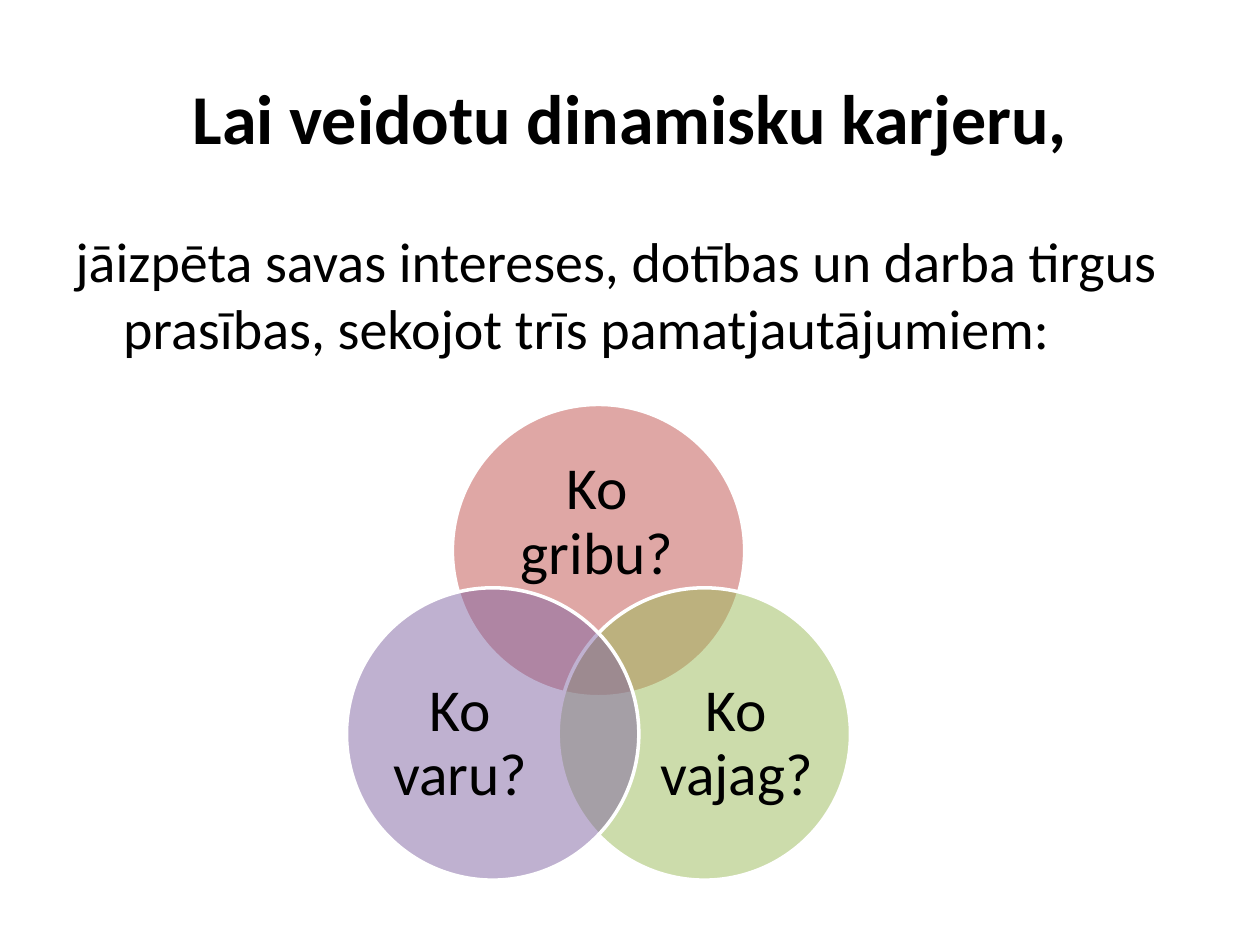
from math import cos, sin, radians
from pptx import Presentation
from pptx.dml.color import RGBColor as RGB
from pptx.enum.shapes import MSO_SHAPE as Shape
from pptx.enum.text import MSO_ANCHOR as Anchor, PP_ALIGN as Align
from pptx.oxml.ns import qn
from pptx.util import Inches, Pt
from lxml.etree import SubElement

THEME = {
    "font": "Calibri", "ink": "000000", "edge": "FFFFFF",
    "red": "C0504D", "green": "9BBB59", "violet": "8064A2",
    "title": 40, "body": 32, "label": 34,
}
WIDE, HIGH = 10, 7.5


def write(shape, text, size, para, frame, bold=False):
    """Fill a shape with one paragraph, formatted from the two dicts."""
    box = shape.text_frame
    box.word_wrap = True
    for key, val in frame.items():
        setattr(box, key, val)
    line = box.paragraphs[0]
    for key, val in para.items():
        setattr(line, key, val)
    run = line.add_run()
    run.text = text
    look = {"name": THEME["font"], "size": Pt(THEME[size]), "bold": bold}
    for key, val in look.items():
        setattr(run.font, key, val)
    run.font.color.rgb = RGB.from_string(THEME["ink"])
    return line


deck = Presentation()
deck.slide_width, deck.slide_height = Inches(WIDE), Inches(HIGH)
slide = deck.slides.add_slide(deck.slide_layouts[5])

# Title and lead text share the left margin
left = WIDE * 0.05
title = slide.shapes.title
place = {"left": left, "top": HIGH * 0.04, "width": WIDE * 0.9, "height": HIGH / 6}
for key, val in place.items():
    setattr(title, key, Inches(val))
write(title, "Lai veidotu dinamisku karjeru,", "title",
      {"alignment": Align.CENTER}, {"vertical_anchor": Anchor.MIDDLE}, True)

lead = slide.shapes.add_textbox(Inches(left), Inches(1.75), Inches(9.33), Inches(4.95))
line = write(lead,
             "jāizpēta savas intereses, dotības un darba tirgus prasības, "
             "sekojot trīs pamatjautājumiem:",
             "body", {"space_before": Pt(6.4)}, {"vertical_anchor": Anchor.TOP})
props = line._p.get_or_add_pPr()
props.set("marL", str(Inches(0.38)))
props.set("indent", str(Inches(-0.38)))

# Venn diagram: three circles around one centre, a third of a turn apart
mid_x, mid_y, orbit, size = 4.75, 5.34, 0.97, 2.32
# colour, text, label box as shares of the circle: left, top, width, height
rings = [
    ("red", "Ko gribu?", (0.13, 0.18, 0.73, 0.45)),
    ("green", "Ko vajag?", (0.31, 0.26, 0.6, 0.55)),
    ("violet", "Ko varu?", (0.09, 0.26, 0.6, 0.55)),
]
centred = {"alignment": Align.CENTER, "line_spacing": 0.9, "space_after": Pt(12)}
tight = {"vertical_anchor": Anchor.MIDDLE, "margin_left": 0, "margin_right": 0,
         "margin_top": 0, "margin_bottom": 0}
venn = slide.shapes.add_group_shape().shapes
for i, (tint, text, (dx, dy, w, h)) in enumerate(rings):
    turn = radians(120 * i)
    x = mid_x + orbit * sin(turn) - size / 2
    y = mid_y - orbit * cos(turn) - size / 2
    ring = venn.add_shape(Shape.OVAL, Inches(x), Inches(y), Inches(size), Inches(size))
    ring.shadow.inherit = False
    ring.fill.solid()
    ring.fill.fore_color.rgb = RGB.from_string(THEME[tint])
    paint = ring._element.spPr.find(qn("a:solidFill"))
    SubElement(paint[0], qn("a:alpha")).set("val", "50000")
    ring.line.color.rgb = RGB.from_string(THEME["edge"])
    ring.line.width = Pt(2)
    label = venn.add_textbox(Inches(x + dx * size), Inches(y + dy * size),
                             Inches(w * size), Inches(h * size))
    write(label, text, "label", centred, tight)

deck.save("out.pptx")
